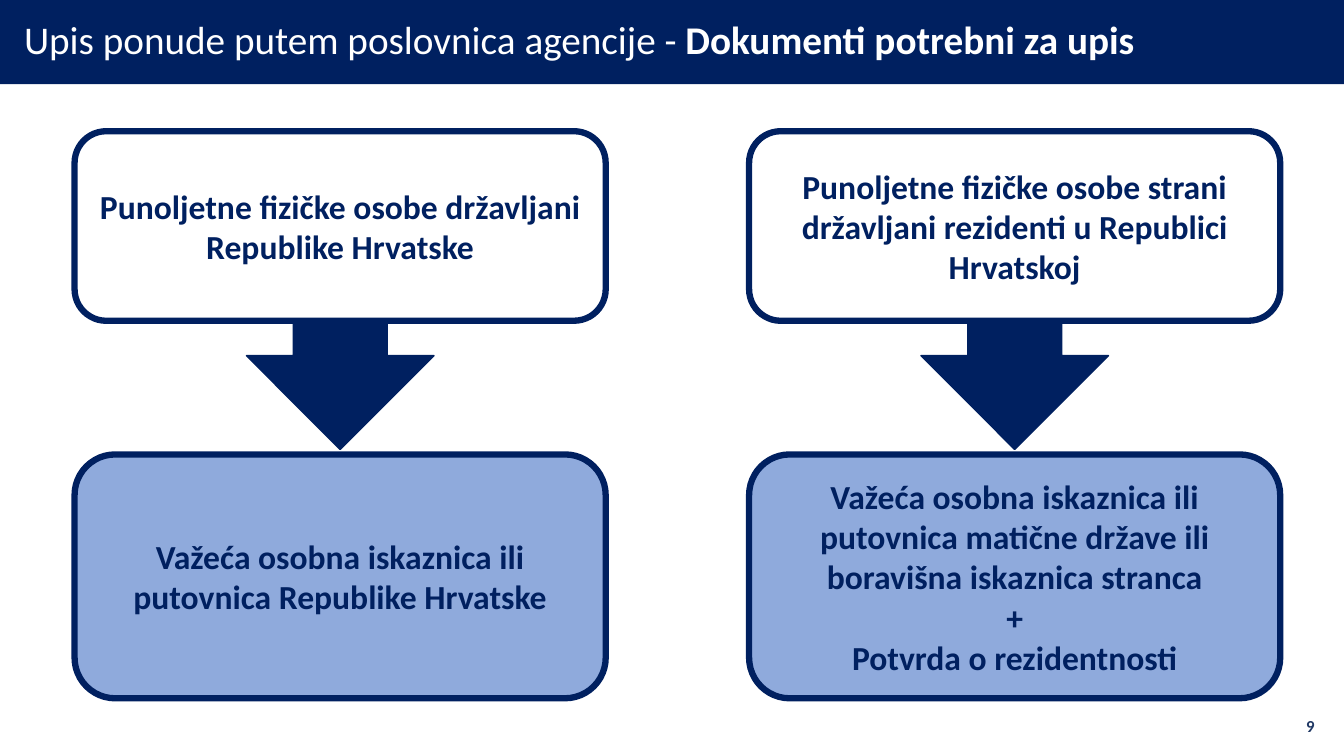
import pptx
import pptx.util
import pptx.dml.color
import pptx.enum.shapes
import pptx.enum.text

Pt = pptx.util.Pt
SHAPES = pptx.enum.shapes.MSO_SHAPE
ALIGN = pptx.enum.text.PP_ALIGN
MIDDLE = pptx.enum.text.MSO_ANCHOR.MIDDLE
NAVY, LIGHT_BLUE, WHITE = "002060", "8FAADC", "FFFFFF"


def color(hex_string):
    return pptx.dml.color.RGBColor.from_string(hex_string)


def add_block(kind, left, top, width, height, fill, line_width=0):
    block = page.shapes.add_shape(kind, Pt(left), Pt(top), Pt(width), Pt(height))
    block.shadow.inherit = False
    block.fill.solid()
    block.fill.fore_color.rgb = color(fill)
    if line_width:
        block.line.color.rgb = color(NAVY)
        block.line.width = Pt(line_width)
    else:
        block.line.fill.background()
    return block


deck = pptx.Presentation()
deck.slide_width, deck.slide_height = Pt(960), Pt(540)
page = deck.slides.add_slide(deck.slide_layouts[6])

# Title band
add_block(SHAPES.RECTANGLE, 0, 0, 960, 60.2, NAVY)
title = page.shapes.add_textbox(Pt(10.1), Pt(4.3), Pt(828), Pt(51.1))
title.text_frame.word_wrap = True
title.text_frame.vertical_anchor = MIDDLE
para = title.text_frame.paragraphs[0]
para.line_spacing = 0.9
for words, bold in (("Upis ponude putem poslovnica agencije - ", False),
                    ("Dokumenti potrebni za upis", True)):
    span = para.add_run()
    span.text = words
    span.font.name = "Calibri"
    span.font.size = Pt(28)
    span.font.bold = bold
    span.font.color.rgb = color(WHITE)

# Two columns: applicant, arrow, required documents
columns = [
    ("Punoljetne fizičke osobe državljani Republike Hrvatske",
     "Važeća osobna iskaznica ili putovnica Republike Hrvatske"),
    ("Punoljetne fizičke osobe strani državljani rezidenti u Republici Hrvatskoj",
     "Važeća osobna iskaznica ili putovnica matične države ili boravišna "
     "iskaznica stranca\n+\nPotvrda o rezidentnosti"),
]
box_width, arrow_width = 379.4, 134
for column, (applicant, documents) in enumerate(columns):
    left = 53.3 + column * 481.8
    add_block(SHAPES.DOWN_ARROW, left + (box_width - arrow_width) / 2, 186.5,
              arrow_width, 134.6, NAVY, 1)
    for words, top, height, fill in ((applicant, 93.7, 135.4, WHITE),
                                     (documents, 324.6, 174.2, LIGHT_BLUE)):
        box = add_block(SHAPES.ROUNDED_RECTANGLE, left, top, box_width, height, fill, 4.5)
        box.text_frame.text = words
        box.text_frame.word_wrap = True
        box.text_frame.vertical_anchor = MIDDLE
        for para in box.text_frame.paragraphs:
            para.alignment = ALIGN.CENTER
            for span in para.runs:
                span.font.name = "Calibri"
                span.font.size = Pt(24)
                span.font.bold = True
                span.font.color.rgb = color(NAVY)

# Page number
number = page.shapes.add_textbox(Pt(914.4), Pt(504), Pt(31.7), Pt(28.8))
number.text_frame.text = "9"
number.text_frame.word_wrap = True
number.text_frame.vertical_anchor = MIDDLE
para = number.text_frame.paragraphs[0]
para.alignment = ALIGN.RIGHT
span = para.runs[0]
span.font.name = "Calibri"
span.font.size = Pt(12)
span.font.bold = True
span.font.color.rgb = color("203864")

deck.save("out.pptx")
